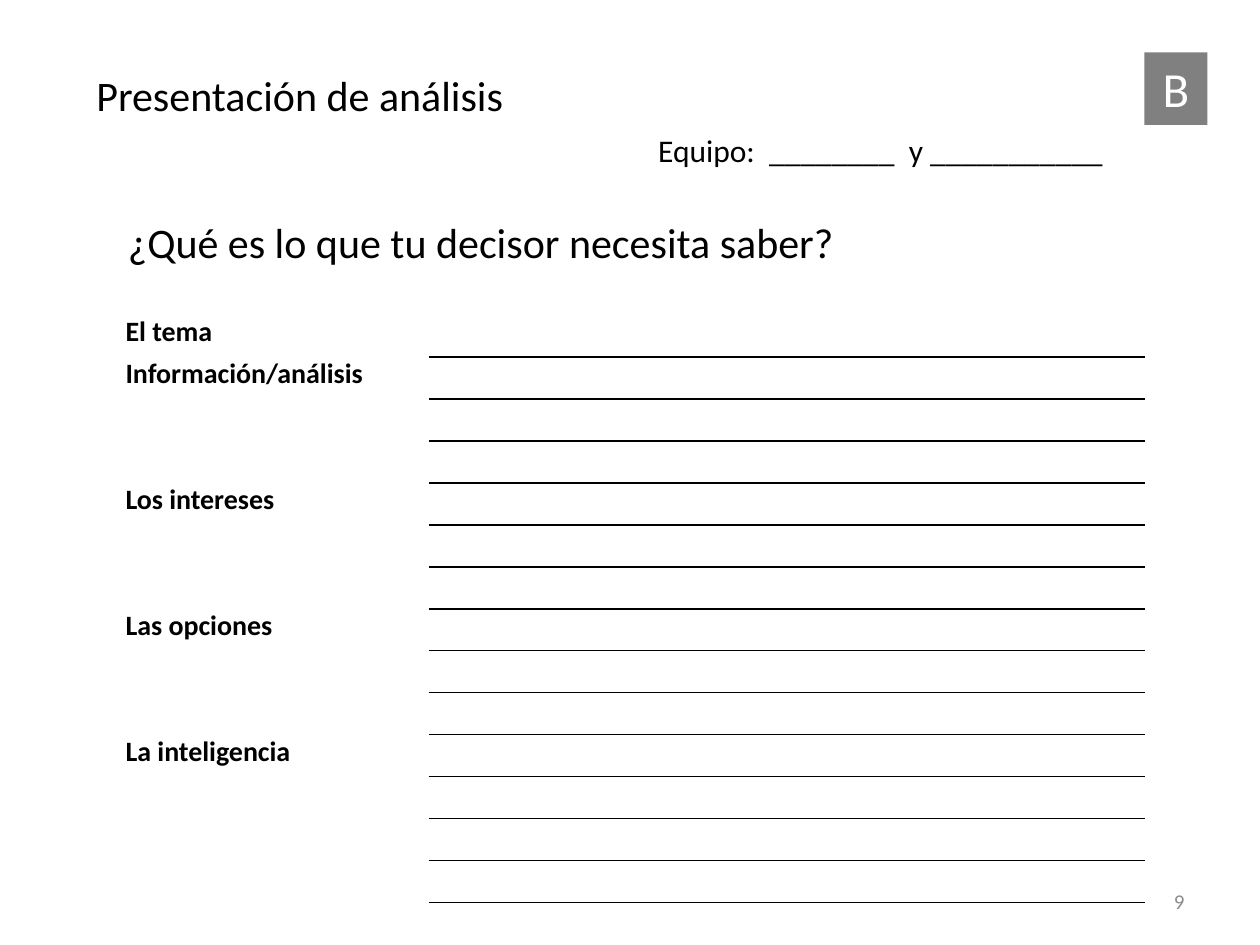
"""Build the worksheet slide on what a decision maker needs to know."""
import pptx
import pptx.dml.color
import pptx.enum.shapes
import pptx.enum.text
import pptx.oxml
import pptx.oxml.ns
import pptx.util

ALIGN = pptx.enum.text.PP_ALIGN
ANCHOR = pptx.enum.text.MSO_ANCHOR

THEME = {
    "font": "Calibri",
    "ink": "000000",
    "paper": "FFFFFF",
    "badge": "808080",
    "muted": "8C8C8C",
    "title": 24,
    "letter": 28,
    "team": 18,
    "label": 16,
    "page": 12,
    "rule": 1,
}

WIDE, HIGH = 10, 7.5
COLS, ROWS = 120, 90

TEXTS = [
    ("¿Qué es lo que tu decisor necesita saber?", (11, 20, 70.3, 6), "title", "ink", ALIGN.LEFT, False),
    ("Equipo:  ________  y ___________", (61.5, 11.9, 46.9, 4.8), "team", "ink", ALIGN.LEFT, False),
    ("Presentación de análisis", (8, 6, 41.5, 6), "title", "ink", ALIGN.LEFT, False),
    ("9", (86, 83.4, 28, 4.8), "page", "muted", ALIGN.RIGHT, True),
]
BADGE = ("B", (109, 5, 6, 6.9))
LABELS = [
    ("El tema", 1),
    ("Información/análisis", 3),
    ("Los intereses", 3),
    ("Las opciones", 3),
    ("La inteligencia", 4),
]
TABLE = {"left": 11, "top": 30, "cols": (29.9, 68.1), "row": 4}


def across(n):
    return pptx.util.Inches(n * WIDE / COLS)


def down(n):
    return pptx.util.Inches(n * HIGH / ROWS)


def place(box):
    left, top, width, height = box
    return across(left), down(top), across(width), down(height)


def tint(name):
    return pptx.dml.color.RGBColor.from_string(THEME[name])


def write(frame, text, size, color, align=ALIGN.LEFT, bold=False):
    para = frame.paragraphs[0]
    para.alignment = align
    run = para.add_run()
    run.text = text
    run.font.name = THEME["font"]
    run.font.size = pptx.util.Pt(THEME[size])
    run.font.bold = bold
    run.font.color.rgb = tint(color)


def add_text(slide, text, box, size, color, align, wrap):
    frame = slide.shapes.add_textbox(*place(box)).text_frame
    frame.word_wrap = wrap
    frame.vertical_anchor = ANCHOR.MIDDLE if wrap else ANCHOR.TOP
    write(frame, text, size, color, align)


def add_badge(slide, text, box):
    shape = slide.shapes.add_shape(
        pptx.enum.shapes.MSO_SHAPE.RECTANGLE, *place(box))
    shape.shadow.inherit = False
    shape.fill.solid()
    shape.fill.fore_color.rgb = tint("badge")
    shape.line.fill.background()
    shape.text_frame.vertical_anchor = ANCHOR.TOP
    write(shape.text_frame, text, "letter", "paper", ALIGN.CENTER)


def add_rule(cell, side):
    width = pptx.util.Pt(THEME["rule"])
    space = pptx.oxml.ns.nsdecls("a")
    line = pptx.oxml.parse_xml(
        f'<a:{side} {space} w="{width}"><a:solidFill>'
        f'<a:srgbClr val="{THEME["ink"]}"/></a:solidFill></a:{side}>')
    cell._tc.get_or_add_tcPr().append(line)


def add_table(slide):
    count = sum(span for _, span in LABELS)
    box = (TABLE["left"], TABLE["top"], sum(TABLE["cols"]), count * TABLE["row"])
    table = slide.shapes.add_table(count, 2, *place(box)).table
    table.first_row = table.horz_banding = False
    for col, width in zip(table.columns, TABLE["cols"]):
        col.width = across(width)
    for index, row in enumerate(table.rows):
        row.height = down(TABLE["row"])
        if index:
            add_rule(row.cells[1], "lnT")
        add_rule(row.cells[1], "lnB")
        for cell in row.cells:
            cell.margin_left = cell.margin_right = pptx.util.Inches(0.08)
            cell.margin_top = cell.margin_bottom = 0
            cell.fill.background()
    start = 0
    for text, span in LABELS:
        cell = table.cell(start, 0)
        cell.margin_bottom = pptx.util.Inches(0.05)
        write(cell.text_frame, text, "label", "ink", bold=True)
        start += span


def main():
    deck = pptx.Presentation()
    deck.slide_width = pptx.util.Inches(WIDE)
    deck.slide_height = pptx.util.Inches(HIGH)
    slide = deck.slides.add_slide(deck.slide_layouts[6])
    add_table(slide)
    add_badge(slide, *BADGE)
    for item in TEXTS:
        add_text(slide, *item)
    deck.save("out.pptx")


if __name__ == "__main__":
    main()
